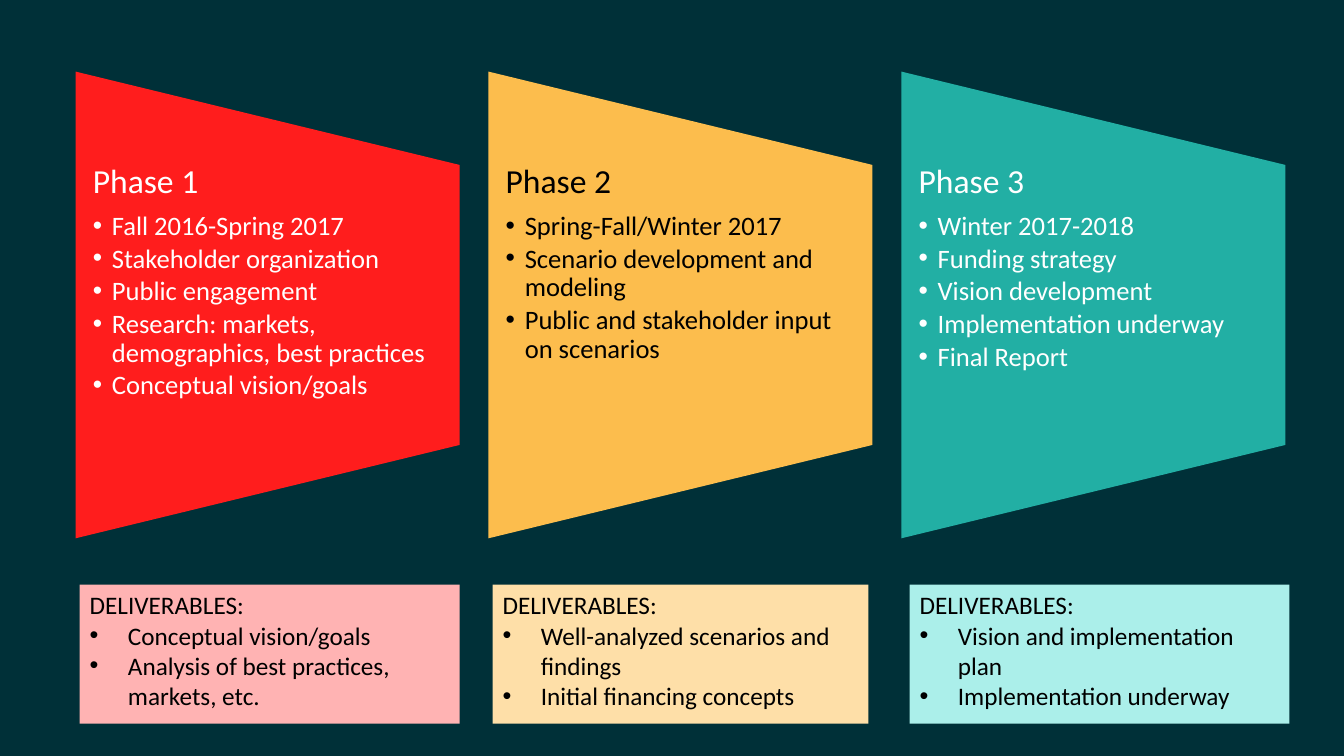
"""Build a slide of three project phases with their deliverables."""
import lxml.etree
import pptx
import pptx.dml.color
import pptx.enum.shapes
import pptx.enum.text
import pptx.oxml.ns
import pptx.util

RGBColor = pptx.dml.color.RGBColor
NIGHT = RGBColor(0x00, 0x30, 0x38)
WHITE = RGBColor(0xFF, 0xFF, 0xFF)
BLACK = RGBColor(0x00, 0x00, 0x00)
RED = RGBColor(0xFF, 0x1D, 0x1D)
AMBER = RGBColor(0xFC, 0xBD, 0x4D)
TEAL = RGBColor(0x22, 0xAF, 0xA4)
PINK = RGBColor(0xFF, 0xB3, 0xB3)
CREAM = RGBColor(0xFE, 0xDF, 0xA8)
AQUA = RGBColor(0xAB, 0xEF, 0xEA)

PHASES = [
    ("Phase 1", RED, WHITE,
     ["Fall 2016-Spring 2017", "Stakeholder organization", "Public engagement",
      "Research: markets, demographics, best practices",
      "Conceptual vision/goals"]),
    ("Phase 2", AMBER, BLACK,
     ["Spring-Fall/Winter 2017", "Scenario development and modeling",
      "Public and stakeholder input on scenarios"]),
    ("Phase 3", TEAL, WHITE,
     ["Winter 2017-2018", "Funding strategy", "Vision development",
      "Implementation underway", "Final Report"]),
]
DELIVERABLES = [
    (0.01, 0.92, PINK,
     ["Conceptual vision/goals", "Analysis of best practices, markets, etc."]),
    (1.01, 0.91, CREAM,
     ["Well-analyzed scenarios and findings", "Initial financing concepts"]),
    (2.02, 0.92, AQUA,
     ["Vision and implementation plan", "Implementation underway"]),
]


class PhaseSlide:
    """Hold the style, the grid and the current slide."""

    FONT = "Calibri"
    MARGIN = pptx.util.Inches(0.75)
    COLUMN = pptx.util.Inches(4.095)
    ROW = pptx.util.Inches(0.1)

    def __init__(self, deck):
        self.slide = deck.slides.add_slide(deck.slide_layouts[6])
        background = self.slide.background.fill
        background.solid()
        background.fore_color.rgb = NIGHT

    def place(self, column, row, columns, rows):
        return (self.MARGIN + round(column * self.COLUMN), round(row * self.ROW),
                round(columns * self.COLUMN), round(rows * self.ROW))

    def add_filled(self, kind, frame, color):
        shape = self.slide.shapes.add_shape(kind, *frame)
        shape.shadow.inherit = False
        shape.fill.solid()
        shape.fill.fore_color.rgb = color
        shape.line.fill.background()
        return shape

    def add_funnel(self, column, row, columns, rows, color):
        left, top, width, height = self.place(column, row, columns, rows)
        shift = (height - width) // 2
        kind = pptx.enum.shapes.MSO_SHAPE.FLOWCHART_MANUAL_OPERATION
        funnel = self.add_filled(kind, (left - shift, top + shift, height, width), color)
        funnel.rotation = 270

    def add_phase_text(self, column, row, columns, rows, title, items, color):
        box = self.slide.shapes.add_textbox(*self.place(column, row, columns, rows))
        frame = box.text_frame
        frame.margin_left = frame.margin_right = pptx.util.Inches(0.17)
        frame.margin_top = frame.margin_bottom = 0
        self.write_list(frame, title, items, color, (24, 19), 0.19)
        for para in frame.paragraphs:
            para.line_spacing = 0.9
            para.space_after = pptx.util.Pt(2.85)
        frame.paragraphs[0].space_after = pptx.util.Pt(8.4)
        for para in frame.paragraphs[1:]:
            para.level = 1

    def add_deliverables(self, column, row, columns, rows, color, items):
        box = self.add_filled(pptx.enum.shapes.MSO_SHAPE.RECTANGLE,
                              self.place(column, row, columns, rows), color)
        frame = box.text_frame
        self.write_list(frame, "DELIVERABLES:", items, BLACK, (18, 18), 0.38)
        frame.auto_size = pptx.enum.text.MSO_AUTO_SIZE.SHAPE_TO_FIT_TEXT

    def write_list(self, frame, title, items, color, sizes, indent):
        frame.word_wrap = True
        frame.vertical_anchor = pptx.enum.text.MSO_ANCHOR.TOP
        frame.text = "\n".join([title, *items])
        for index, para in enumerate(frame.paragraphs):
            para.alignment = pptx.enum.text.PP_ALIGN.LEFT
            for span in para.runs:
                span.font.name = self.FONT
                span.font.size = pptx.util.Pt(sizes[min(index, 1)])
                span.font.color.rgb = color
            if index:
                self.add_bullet(para, pptx.util.Inches(indent))

    def add_bullet(self, para, indent):
        properties = para._p.get_or_add_pPr()
        properties.set("marL", str(indent))
        properties.set("indent", str(-indent))
        qn = pptx.oxml.ns.qn
        lxml.etree.SubElement(properties, qn("a:buFont"), typeface="Arial")
        lxml.etree.SubElement(properties, qn("a:buChar"), char="•")


def main():
    deck = pptx.Presentation()
    deck.slide_width = pptx.util.Inches(13.33)
    deck.slide_height = pptx.util.Inches(7.5)
    page = PhaseSlide(deck)
    for column, (title, color, ink, items) in enumerate(PHASES):
        page.add_funnel(column, 7.1, 0.93, 46.3, color)
        page.add_phase_text(column, 16.3, 0.93, 27.8, title, items, ink)
    for column, columns, color, items in DELIVERABLES:
        page.add_deliverables(column, 58, columns, 13.8, color, items)
    deck.save("out.pptx")


if __name__ == "__main__":
    main()
